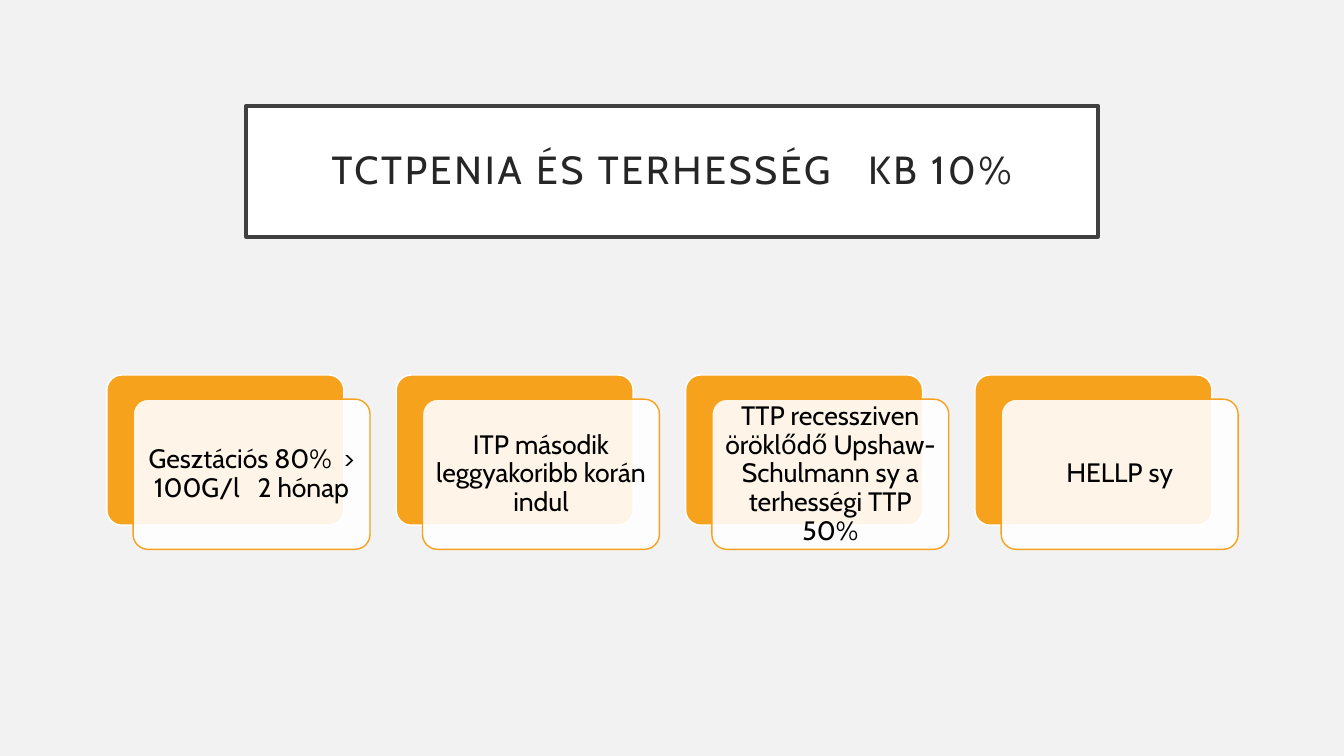
from dataclasses import dataclass

from pptx import Presentation
from pptx import util as u
from pptx.dml.color import RGBColor
from pptx.enum import shapes, text
from pptx.oxml.ns import qn
from lxml import etree

EMU_PER_PX = 9144


@dataclass(frozen=True)
class Theme:
    font: str = "Cabin"
    background: str = "F2F2F2"
    paper: str = "FFFFFF"
    accent: str = "F6A21D"
    frame: str = "404040"
    heading: str = "262626"
    ink: str = "000000"
    heading_size: int = 28
    card_size: int = 19


THEME = Theme()
CAUSES = [
    "Gesztációs 80%  > 100G/l   2 hónap",
    "ITP második leggyakoribb korán indul",
    "TTP recessziven öröklődő Upshaw-Schulmann sy a terhességi TTP 50%",
    "HELLP sy",
]
CARD_LEFT, CARD_TOP, CARD_PITCH = 106, 372, 287
CARD_WIDTH, CARD_HEIGHT = 235, 149
FRONT_DX, FRONT_DY = 26, 24


def px(length):
    return u.Emu(length * EMU_PER_PX)


def apply(target, values):
    for name, value in values.items():
        setattr(target, name, value)


def paint(shape, fill, line, weight):
    shape.fill.solid()
    shape.fill.fore_color.rgb = RGBColor.from_string(fill)
    shape.line.color.rgb = RGBColor.from_string(line)
    shape.line.width = u.Pt(weight)


def write(shape, wording, size, color, inset):
    frame = shape.text_frame
    apply(frame, {
        "word_wrap": True,
        "auto_size": text.MSO_AUTO_SIZE.NONE,
        "vertical_anchor": text.MSO_ANCHOR.MIDDLE,
        "margin_left": px(inset),
        "margin_right": px(inset),
        "margin_top": px(inset),
        "margin_bottom": px(inset),
    })
    paragraph = frame.paragraphs[0]
    apply(paragraph, {"alignment": text.PP_ALIGN.CENTER, "line_spacing": 0.9})
    run = paragraph.add_run()
    run.text = wording
    apply(run.font, {"name": THEME.font, "size": u.Pt(size), "bold": False})
    run.font.color.rgb = RGBColor.from_string(color)
    return run


def add_heading(slide, wording):
    heading = slide.shapes.title
    apply(heading, {"left": px(244), "top": px(105),
                    "width": px(845), "height": px(130)})
    paint(heading, THEME.paper, THEME.frame, 2.5)
    run = write(heading, wording, THEME.heading_size, THEME.heading, 20)
    run.font._element.set("spc", "200")


def add_panel(group, left, top, fill, line):
    panel = group.shapes.add_shape(
        shapes.MSO_SHAPE.ROUNDED_RECTANGLE,
        px(left), px(top), px(CARD_WIDTH), px(CARD_HEIGHT))
    panel.adjustments[0] = 0.1
    panel.shadow.inherit = False
    paint(panel, fill, line, 1)
    return panel


def set_opacity(shape, percent):
    color = shape.fill._xPr.find(qn("a:solidFill"))[0]
    etree.SubElement(color, qn("a:alpha")).set("val", str(percent * 1000))


def add_card(group, left, top, wording):
    add_panel(group, left, top, THEME.accent, THEME.paper)
    front = add_panel(group, left + FRONT_DX, top + FRONT_DY,
                      THEME.paper, THEME.accent)
    set_opacity(front, 90)
    write(front, wording, THEME.card_size, THEME.ink, 8)


def main():
    deck = Presentation()
    apply(deck, {"slide_width": px(1333), "slide_height": px(750)})
    slide = deck.slides.add_slide(deck.slide_layouts[5])
    slide.background.fill.solid()
    slide.background.fill.fore_color.rgb = RGBColor.from_string(THEME.background)
    add_heading(slide, "TCTPENIA ÉS TERHESSÉG   KB 10%")
    cards = slide.shapes.add_group_shape()
    for column, cause in enumerate(CAUSES):
        add_card(cards, CARD_LEFT + column * CARD_PITCH, CARD_TOP, cause)
    deck.save("out.pptx")


if __name__ == "__main__":
    main()
